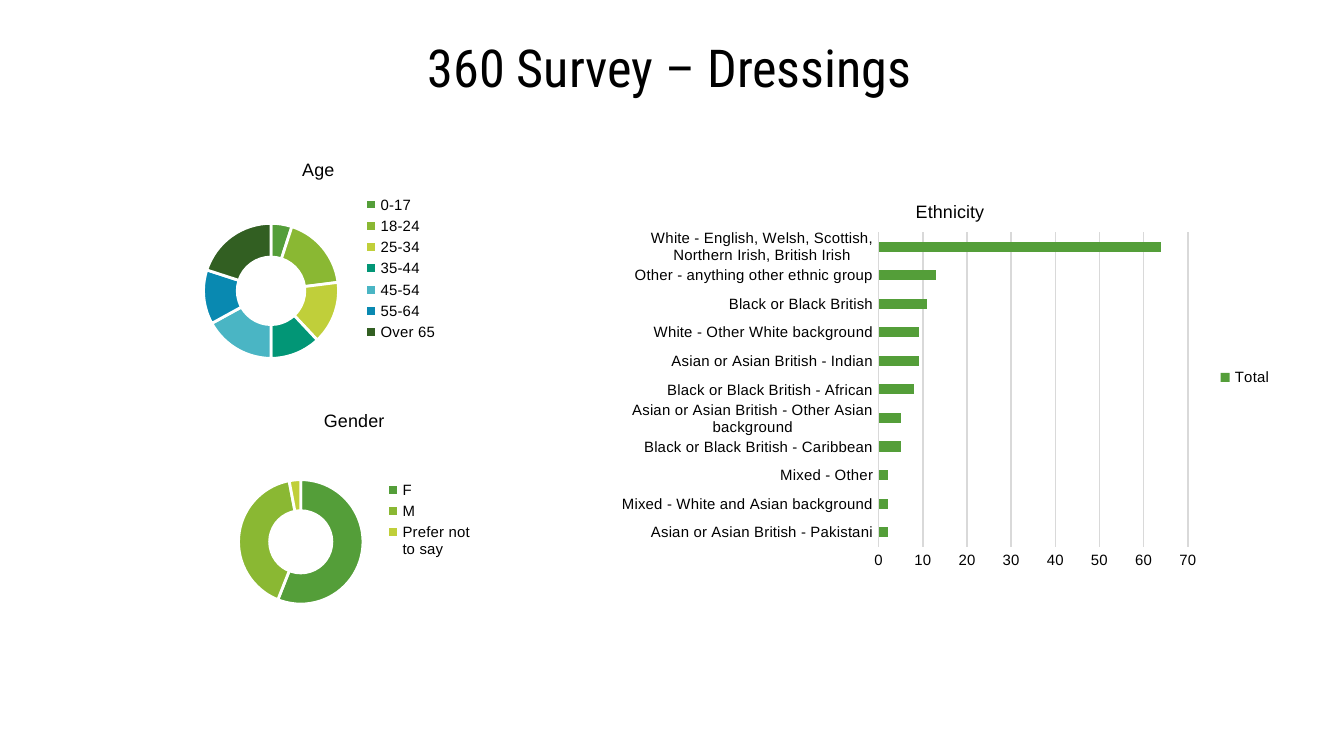
from lxml import etree
from pptx import Presentation
from pptx.chart.data import CategoryChartData
from pptx.dml.color import RGBColor
from pptx.enum.chart import XL_CHART_TYPE, XL_LEGEND_POSITION, XL_TICK_MARK
from pptx.enum.text import MSO_ANCHOR, PP_ALIGN
from pptx.oxml.ns import qn
from pptx.util import Pt

DOUGHNUT = XL_CHART_TYPE.DOUGHNUT
BAR = XL_CHART_TYPE.BAR_CLUSTERED
LEGEND_RIGHT = XL_LEGEND_POSITION.RIGHT
NO_TICK = XL_TICK_MARK.NONE
MIDDLE = MSO_ANCHOR.MIDDLE
CENTER = PP_ALIGN.CENTER

EMU_PER_PX = 914400 / 134.4
BLACK, WHITE, GREY = "000000", "FFFFFF", "D9D9D9"
PALETTE = ["549E39", "8AB833", "C0CF3A", "029676", "4AB5C4", "0989B1", "325F22"]

AGE = {"0-17": 5, "18-24": 18, "25-34": 15, "35-44": 12,
       "45-54": 17, "55-64": 13, "Over 65": 20}
GENDER = {"F": 56, "M": 41, "Prefer not to say": 3}
ETHNICITY = {
    "Asian or Asian British - Pakistani": 2,
    "Mixed - White and Asian background": 2,
    "Mixed - Other": 2,
    "Black or Black British - Caribbean": 5,
    "Asian or Asian British - Other Asian background": 5,
    "Black or Black British - African": 8,
    "Asian or Asian British - Indian": 9,
    "White - Other White background": 9,
    "Black or Black British": 11,
    "Other - anything other ethnic group": 13,
    "White - English, Welsh, Scottish, Northern Irish, British Irish": 64,
}


def px(length):
    return round(length * EMU_PER_PX)


def color(hex_code):
    return RGBColor.from_string(hex_code)


def style_font(font, size, name="Arial"):
    font.size = Pt(size)
    font.name = name
    font.bold = False
    font.color.rgb = color(BLACK)


def style_line(line, hex_code, width):
    line.color.rgb = color(hex_code)
    line.width = Pt(width)


def place_part(part, **fractions):
    """Fix a chart part at fractions of the chart area."""
    old = part.find(qn("c:layout"))
    if old is not None:
        part.remove(old)
    layout = etree.Element(qn("c:layout"))
    manual = etree.SubElement(layout, qn("c:manualLayout"))
    is_plot = part.tag == qn("c:plotArea")
    if is_plot:
        etree.SubElement(manual, qn("c:layoutTarget"), val="inner")
    for axis in "xy":
        etree.SubElement(manual, qn(f"c:{axis}Mode"), val="edge")
    for key, value in fractions.items():
        etree.SubElement(manual, qn(f"c:{key}"), val=str(value))
    if is_plot:
        part.insert(0, layout)
    else:
        part.find(qn("c:overlay")).addprevious(layout)


def add_heading(slide, text, left, top, width, height):
    frame = slide.shapes.add_textbox(px(left), px(top), px(width), px(height)).text_frame
    frame.word_wrap = True
    frame.vertical_anchor = MIDDLE
    heading = frame.paragraphs[0]
    heading.text = text
    heading.alignment = CENTER
    style_font(heading.font, 28, "Roboto Condensed")


def add_chart(slide, kind, title, series_name, counts, box, title_at, plot_at, legend_at):
    data = CategoryChartData()
    data.categories = list(counts)
    data.add_series(series_name, list(counts.values()))
    chart = slide.shapes.add_chart(kind, *map(px, box), data).chart
    style_font(chart.font, 8)

    # Title and legend
    chart.has_title = True
    caption = chart.chart_title.text_frame.paragraphs[0]
    caption.text = title
    style_font(caption.font, 9.6)
    chart.has_legend = True
    chart.legend.position = LEGEND_RIGHT
    chart.legend.include_in_layout = False
    style_font(chart.legend.font, 8)

    # Positions inside the chart
    root = chart.element
    for tag, place, keys in (("title", title_at, "xy"),
                             ("plotArea", plot_at, "xywh"),
                             ("legend", legend_at, "xywh")):
        place_part(root.find(f".//{qn('c:' + tag)}"), **dict(zip(keys, place)))
    return chart


def add_doughnut(slide, title, counts, box, title_at, plot_at, legend_at):
    chart = add_chart(slide, DOUGHNUT, title, "Series 1", counts, box,
                      title_at, plot_at, legend_at)
    chart.element.find(f".//{qn('c:holeSize')}").set("val", "75")
    for index, hex_code in enumerate(PALETTE[:len(counts)]):
        slice_format = chart.plots[0].series[0].points[index].format
        slice_format.fill.solid()
        slice_format.fill.fore_color.rgb = color(hex_code)
        style_line(slice_format.line, WHITE, 1.5)


def add_bars(slide, title, counts, box, title_at, plot_at, legend_at):
    chart = add_chart(slide, BAR, title, "Total", counts, box,
                      title_at, plot_at, legend_at)
    plot = chart.plots[0]
    plot.gap_width = 182
    plot.vary_by_categories = False
    fill = plot.series[0].format.fill
    fill.solid()
    fill.fore_color.rgb = color(PALETTE[0])

    # Axes
    categories, values = chart.category_axis, chart.value_axis
    for axis in (categories, values):
        axis.major_tick_mark = axis.minor_tick_mark = NO_TICK
        style_font(axis.tick_labels.font, 8)
    style_line(categories.format.line, GREY, 0.75)
    values.format.line.fill.background()
    values.minimum_scale, values.maximum_scale, values.major_unit = 0, 70, 10
    style_line(values.major_gridlines.format.line, GREY, 0.75)


def main():
    deck = Presentation()
    deck.slide_width, deck.slide_height = px(1344), px(756)
    slide = deck.slides.add_slide(deck.slide_layouts[6])

    add_heading(slide, "360 Survey – Dressings", 43, 24, 1253, 85)

    # Respondents by age and gender
    add_doughnut(slide, "Age", AGE, (185, 136, 265, 265),
                 (0.43, 0.07), (0.07, 0.33, 0.51, 0.51), (0.66, 0.21, 0.31, 0.58))
    add_doughnut(slide, "Gender", GENDER, (220, 387, 265, 265),
                 (0.38, 0.07), (0.07, 0.35, 0.47, 0.47), (0.61, 0.34, 0.36, 0.32))

    # Respondents by ethnicity
    add_bars(slide, "Ethnicity", ETHNICITY, (610, 176, 672, 403),
             (0.45, 0.05), (0.4, 0.14, 0.46, 0.78), (0.9, 0.47, 0.09, 0.06))

    deck.save("out.pptx")


if __name__ == "__main__":
    main()
